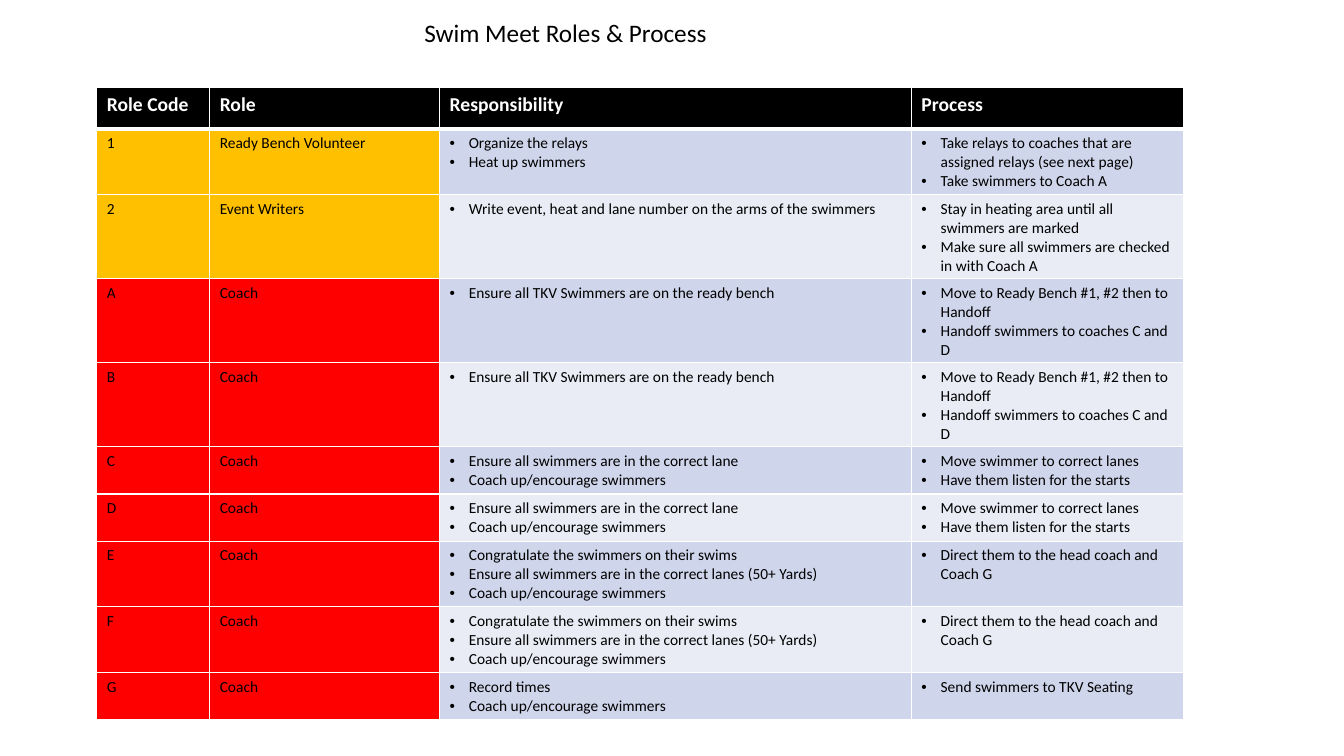
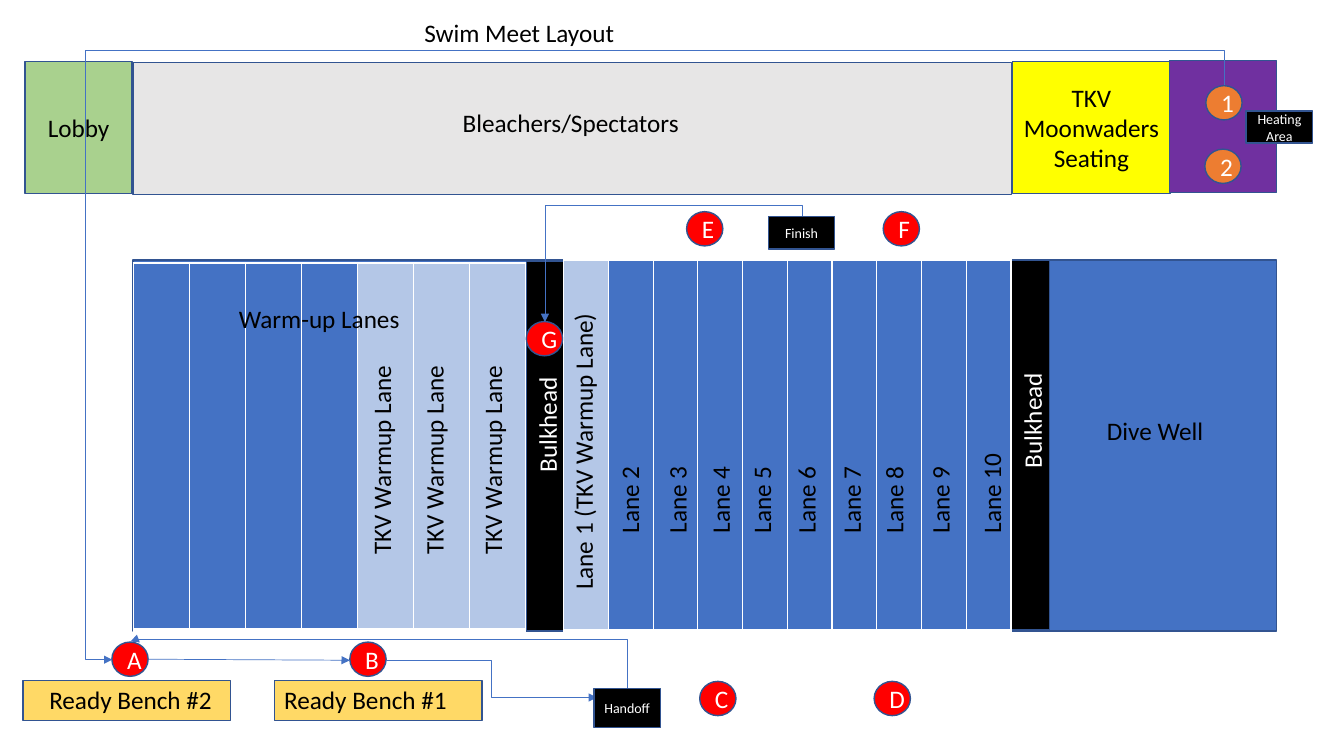
import pptx
import pptx.util
import pptx.dml.color
import pptx.enum.shapes
import pptx.enum.text
import pptx.oxml.ns
import lxml.etree

Inches = pptx.util.Inches
Pt = pptx.util.Pt
RGBColor = pptx.dml.color.RGBColor
SHAPE = pptx.enum.shapes.MSO_SHAPE
CONNECTOR = pptx.enum.shapes.MSO_CONNECTOR
ALIGN = pptx.enum.text.PP_ALIGN
ANCHOR = pptx.enum.text.MSO_ANCHOR
qn = pptx.oxml.ns.qn

FONT = "Calibri"
BLACK = RGBColor(0x00, 0x00, 0x00)
WHITE = RGBColor(0xFF, 0xFF, 0xFF)
RED = RGBColor(0xFF, 0x00, 0x00)
ORANGE = RGBColor(0xED, 0x7D, 0x31)
AMBER = RGBColor(0xFF, 0xC0, 0x00)
GOLD = RGBColor(0xFF, 0xD9, 0x66)
YELLOW = RGBColor(0xFF, 0xFF, 0x00)
GREEN = RGBColor(0xA9, 0xD1, 0x8E)
PURPLE = RGBColor(0x70, 0x30, 0xA0)
GRAY = RGBColor(0xE7, 0xE6, 0xE6)
BLUE = RGBColor(0x44, 0x72, 0xC4)
LIGHT_BLUE = RGBColor(0xB4, 0xC7, 0xE7)
OUTLINE = RGBColor(0x32, 0x54, 0x91)
BANDS = (RGBColor(0xCF, 0xD5, 0xEA), RGBColor(0xE9, 0xEB, 0xF5))

CLUB = "TKV"
TEAM = "Moonwaders"
HEADINGS = ("Role Code", "Role", "Responsibility", "Process")
COLUMN_WIDTHS = (1.12, 2.28, 4.68, 2.7)
READY_CHECK = [f"Ensure all {CLUB} Swimmers are on the ready bench"]
HANDOFF = ["Move to Ready Bench #1, #2 then to Handoff",
           "Handoff swimmers to coaches C and D"]
ENCOURAGE = "Coach up/encourage swimmers"
LANE_CHECK = ["Ensure all swimmers are in the correct lane", ENCOURAGE]
LANE_MOVE = ["Move swimmer to correct lanes", "Have them listen for the starts"]
CONGRATULATE = ["Congratulate the swimmers on their swims",
                "Ensure all swimmers are in the correct lanes (50+ Yards)",
                ENCOURAGE]
DIRECT = ["Direct them to the head coach and Coach G"]
ROLES = (
    ("1", "Ready Bench Volunteer", ["Organize the relays", "Heat up swimmers"],
     ["Take relays to coaches that are assigned relays (see next page)",
      "Take swimmers to Coach A"]),
    ("2", "Event Writers",
     ["Write event, heat and lane number on the arms of the swimmers"],
     ["Stay in heating area until all swimmers are marked",
      "Make sure all swimmers are checked in with Coach A"]),
    ("A", "Coach", READY_CHECK, HANDOFF),
    ("B", "Coach", READY_CHECK, HANDOFF),
    ("C", "Coach", LANE_CHECK, LANE_MOVE),
    ("D", "Coach", LANE_CHECK, LANE_MOVE),
    ("E", "Coach", CONGRATULATE, DIRECT),
    ("F", "Coach", CONGRATULATE, DIRECT),
    ("G", "Coach", ["Record times", ENCOURAGE], [f"Send swimmers to {CLUB} Seating"]),
)

LANE_LEFTS = (5.14, 5.61, 6.04, 6.45, 6.89, 7.34, 7.76, 8.22, 8.73)
COACHES = (("G", 5.22, 3.19), ("F", 8.76, 2.1), ("E", 6.81, 2.1), ("D", 8.67, 6.76),
           ("C", 6.94, 6.76), ("B", 3.47, 6.37), ("A", 1.11, 6.37))
VOLUNTEERS = (("1", 11.96, 0.85), ("2", 11.95, 1.48))
TAGS = (("Handoff", 5.89, 6.83, 0.39), ("Finish", 7.62, 2.15, 0.32),
        ("Heating Area", 12.36, 1.1, 0.32))


def write(frame, text, size, color, bold=False, align=None):
    frame.text = text
    for para in frame.paragraphs:
        para.alignment = align
        for span in para.runs:
            span.font.name = FONT
            span.font.size = Pt(size)
            span.font.bold = bold
            span.font.color.rgb = color


def add_label(page, text, left, top, width, height=0.42, color=BLACK, rotation=0):
    box = page.shapes.add_textbox(Inches(left), Inches(top), Inches(width), Inches(height))
    box.rotation = rotation
    box.text_frame.word_wrap = True
    box.text_frame.auto_size = pptx.enum.text.MSO_AUTO_SIZE.SHAPE_TO_FIT_TEXT
    write(box.text_frame, text, 18, color)


def add_title(page, text):
    add_label(page, text, 4.11, 0.12, 5.18)


def add_block(page, left, top, width, height, fill, text="", color=BLACK, size=18,
              kind=SHAPE.RECTANGLE):
    block = page.shapes.add_shape(kind, Inches(left), Inches(top),
                                  Inches(width), Inches(height))
    block.shadow.inherit = False
    block.fill.solid()
    block.fill.fore_color.rgb = fill
    block.line.color.rgb = OUTLINE
    block.line.width = Pt(1)
    if text:
        block.text_frame.vertical_anchor = ANCHOR.MIDDLE
        write(block.text_frame, text, size, color, align=ALIGN.CENTER)


def add_marker(page, text, left, top, fill):
    add_block(page, left, top, 0.36, 0.34, fill, text, WHITE, kind=SHAPE.OVAL)


def style_cell(cell, fill, bottom=1):
    properties = cell._tc.get_or_add_tcPr()
    for side, width in (("L", 1), ("R", 1), ("T", 1), ("B", bottom)):
        line = lxml.etree.SubElement(properties, qn("a:ln" + side), w=str(Pt(width)))
        solid = lxml.etree.SubElement(line, qn("a:solidFill"))
        lxml.etree.SubElement(solid, qn("a:srgbClr"), val=str(WHITE))
    cell.fill.solid()
    cell.fill.fore_color.rgb = fill


def add_bullets(frame):
    for para in frame.paragraphs:
        properties = para._p.get_or_add_pPr()
        properties.set("marL", str(Inches(0.19)))
        properties.set("indent", str(-Inches(0.19)))
        lxml.etree.SubElement(properties, qn("a:buFont"), typeface="Arial")
        lxml.etree.SubElement(properties, qn("a:buChar"), char="•")


def add_roles_table(page):
    row_height = 0.41
    row_count = len(ROLES) + 1
    table = page.shapes.add_table(row_count, len(HEADINGS), Inches(0.96), Inches(0.87),
                                  Inches(sum(COLUMN_WIDTHS)),
                                  Inches(row_height * row_count)).table
    for column, width in zip(table.columns, COLUMN_WIDTHS):
        column.width = Inches(width)
    for index, heading in enumerate(HEADINGS):
        cell = table.cell(0, index)
        style_cell(cell, BLACK, bottom=3)
        write(cell.text_frame, heading, 14, WHITE, bold=True)
    for row, (code, role, duties, steps) in enumerate(ROLES, 1):
        role_fill = AMBER if code.isdigit() else RED
        band = BANDS[(row - 1) % 2]
        for index, text in enumerate((code, role, "\n".join(duties), "\n".join(steps))):
            cell = table.cell(row, index)
            style_cell(cell, role_fill if index < 2 else band)
            write(cell.text_frame, text, 11, BLACK)
            if index >= 2:
                add_bullets(cell.text_frame)


def add_lanes(page, left, top, width, height, fills):
    table = page.shapes.add_table(1, len(fills), Inches(left), Inches(top),
                                  Inches(width), Inches(height)).table
    for index, fill in enumerate(fills):
        style_cell(table.cell(0, index), fill, bottom=3)


def add_arrow(page, kind, left, top, width, height):
    arrow = page.shapes.add_connector(kind, Inches(left), Inches(top),
                                      Inches(left + width), Inches(top + height))
    arrow.line.color.rgb = BLUE
    arrow.line.width = Pt(0.5)
    lxml.etree.SubElement(arrow.line._get_or_add_ln(), qn("a:tailEnd"), type="triangle")
    lxml.etree.SubElement(arrow._element.spPr, qn("a:effectLst"))
    return arrow


def add_elbow(page, left, top, width, height, adjustments, rotation=0, flips=()):
    arrow = add_arrow(page, CONNECTOR.ELBOW, left, top, width, height)
    properties = arrow._element.spPr
    frame = properties.find(qn("a:xfrm"))
    frame.set("rot", str(rotation * 60000))
    for flip in flips:
        frame.set(flip, "1")
    geometry = properties.find(qn("a:prstGeom"))
    geometry.set("prst", f"bentConnector{len(adjustments) + 2}")
    values = geometry.find(qn("a:avLst"))
    if values is None:
        values = lxml.etree.SubElement(geometry, qn("a:avLst"))
    for number, share in enumerate(adjustments, 1):
        lxml.etree.SubElement(values, qn("a:gd"), name=f"adj{number}",
                              fmla=f"val {round(share * 100000)}")


def add_pool(page):
    add_block(page, 1.32, 0.62, 8.71, 1.31, GRAY)
    add_block(page, 1.32, 2.58, 11.34, 3.68, BLUE)
    add_block(page, 10.03, 2.58, 0.38, 3.67, BLACK)
    add_block(page, 5.22, 2.59, 0.38, 3.67, BLACK)
    add_lanes(page, 5.59, 2.58, 4.44, 3.68, [LIGHT_BLUE] + [BLUE] * 9)
    add_lanes(page, 1.32, 2.61, 3.89, 3.64, [BLUE] * 4 + [LIGHT_BLUE] * 3)
    for left in (0.23, 2.72):
        add_block(page, left, 6.75, 2.06, 0.4, GOLD)


def add_pool_labels(page):
    for number, left in enumerate(LANE_LEFTS, 2):
        add_label(page, f"Lane {number}", left, 4.07, 2.22, rotation=270)
    add_label(page, f"Lane 1 ({CLUB} Warmup Lane)", 4.09, 4.06, 3.38, 0.4, rotation=270)
    for left, top, width in ((2.09, 3.71, 3.38), (2.76, 3.86, 3.08), (3.34, 3.86, 3.08)):
        add_label(page, f"{CLUB} Warmup Lane", left, top, width, 0.4, rotation=270)
    for left, top in ((4.36, 3.52), (9.17, 3.48)):
        add_label(page, "Bulkhead", left, top, 2.13, 0.4, WHITE, 270)
    add_label(page, "Dive Well", 10.88, 4.07, 2.22)
    add_label(page, "Ready Bench #2", 0.39, 6.74, 2.22)
    add_label(page, "Ready Bench #1", 2.72, 6.74, 2.22)
    add_label(page, "Bleachers/Spectators", 4.49, 1.02, 2.44, 0.4)
    add_label(page, "Warm-up Lanes", 2.27, 2.96, 2.22, 0.4)


def add_stations(page):
    add_block(page, 10.04, 0.61, 1.57, 1.31, YELLOW, f"{CLUB} {TEAM}\nSeating")
    add_block(page, 11.6, 0.6, 1.06, 1.31, PURPLE)
    add_block(page, 0.25, 0.61, 1.06, 1.31, GREEN, "Lobby")
    for fill, markers in ((RED, COACHES), (ORANGE, VOLUNTEERS)):
        for text, left, top in markers:
            add_marker(page, text, left, top, fill)


def add_routes(page):
    both = ("flipH", "flipV")
    add_elbow(page, 3.78, -1.82, 5.7, 11.03, (-0.06, 1 + 0.26 / 11.03), 270, both)
    add_arrow(page, CONNECTOR.STRAIGHT, 1.47, 6.54, 2, 0.01)
    add_elbow(page, 3.83, 6.55, 2.09, 0.37, (0.5,))
    add_elbow(page, 3.53, 4.13, 0.46, 4.93, (1.05,), 270, ("flipV",))
    add_elbow(page, 6.16, 1.4, 1.04, 2.55, (-0.11,), 270, both)


def add_tags(page):
    for text, left, top, height in TAGS:
        add_block(page, left, top, 0.66, height, BLACK, text, WHITE, 10)


def main():
    deck = pptx.Presentation()
    deck.slide_width = Inches(13.33)
    deck.slide_height = Inches(7.5)
    blank = deck.slide_layouts[6]

    roles = deck.slides.add_slide(blank)
    add_title(roles, "Swim Meet Roles & Process")
    add_roles_table(roles)

    layout = deck.slides.add_slide(blank)
    add_pool(layout)
    add_title(layout, "Swim Meet Layout")
    add_pool_labels(layout)
    add_stations(layout)
    add_routes(layout)
    add_tags(layout)

    deck.save("out.pptx")


if __name__ == "__main__":
    main()
